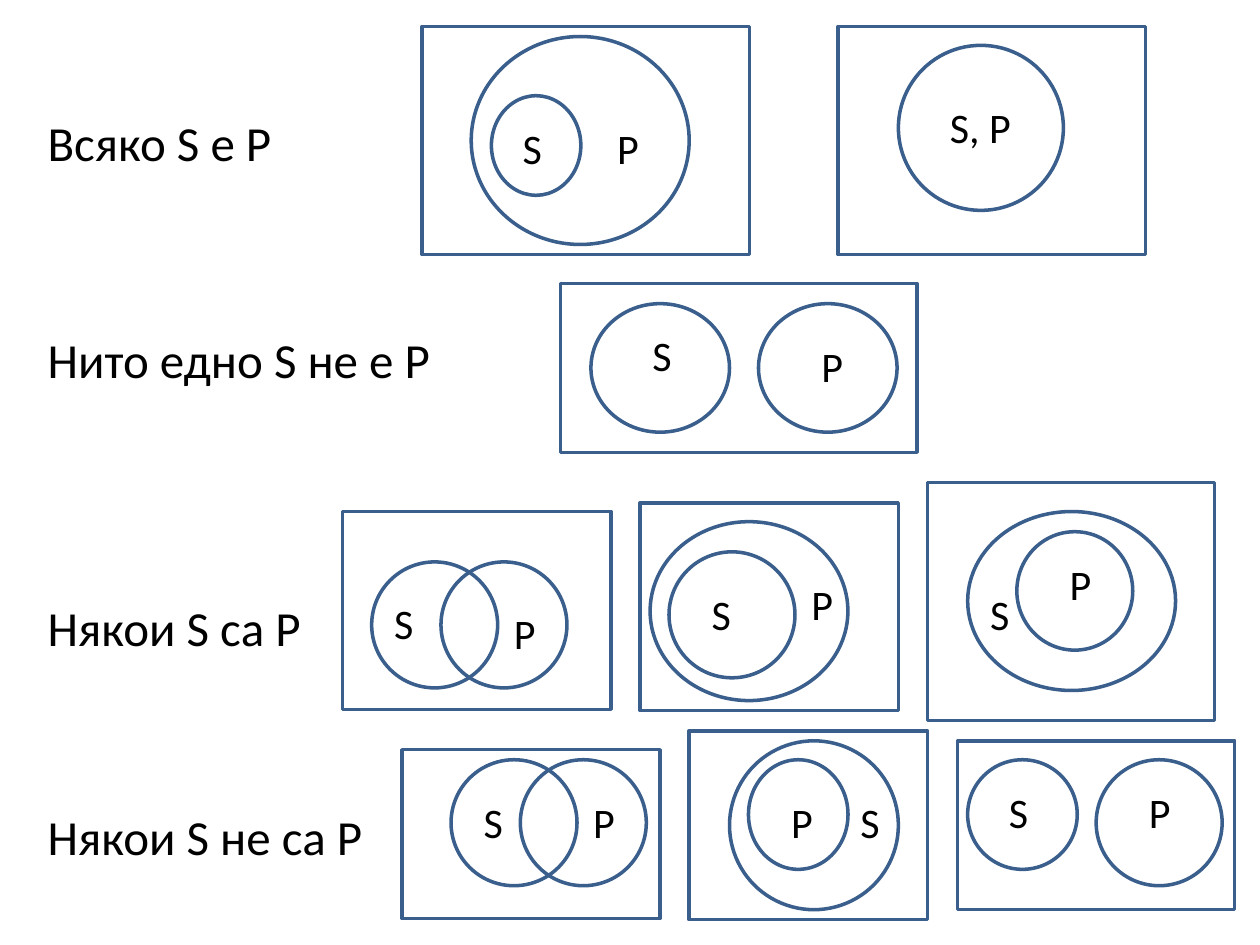
"""Euler diagrams for the four categorical statements about S and P."""
from pptx import Presentation
from pptx.dml.color import RGBColor
from pptx.enum.shapes import MSO_SHAPE as Shape
from pptx.util import Inches, Pt

BLUE = RGBColor(0x3A, 0x5F, 0x8C)
BLACK = RGBColor(0, 0, 0)
FONT = "Calibri"
LEFT = 0.28
LABEL_WIDTHS = {"S": 0.36, "P": 0.38, "S, P": 1.02}

STATEMENTS = [
    ("Всяко S е P", 0.84, 2.2, 0.57),
    ("Нито едно S не е P", 2.57, 3.39, 0.57),
    ("Някои S са P", 4.69, 2.24, 0.88),
    ("Някои S не са P", 6.35, 2.76, 0.57),
]

# Each diagram: frame, circles (left, top, width, height), labels (text, left, top)
DIAGRAMS = [
    ((3.35, 0.21, 2.6, 1.81),
     [(3.74, 0.29, 1.73, 1.65), (3.9, 0.76, 0.71, 0.79)],
     [("S", 4.05, 0.92), ("P", 4.8, 0.92)]),
    ((6.65, 0.21, 2.44, 1.81),
     [(7.13, 0.36, 1.31, 1.31)],
     [("S, P", 7.44, 0.76)]),
    ((4.45, 2.25, 2.83, 1.34),
     [(4.69, 2.41, 1.1, 1.02), (6.02, 2.41, 1.1, 1.02)],
     [("S", 5.08, 2.57), ("P", 6.42, 2.65)]),
    ((2.72, 4.06, 2.13, 1.57),
     [(2.95, 4.46, 1, 1), (3.5, 4.46, 1, 1)],
     [("S", 3.03, 4.69), ("P", 3.98, 4.77)]),
    ((5.08, 3.99, 2.05, 1.65),
     [(5.16, 4.14, 1.57, 1.42), (5.31, 4.38, 1, 1)],
     [("S", 5.55, 4.62), ("P", 6.34, 4.54)]),
    ((7.36, 3.83, 2.28, 1.89),
     [(7.68, 4.06, 1.65, 1.42), (8.07, 4.22, 0.92, 0.94)],
     [("S", 7.76, 4.62), ("P", 8.39, 4.38)]),
    ((3.19, 5.95, 2.05, 1.34),
     [(3.58, 6.03, 1, 1), (4.13, 6.03, 1, 1)],
     [("S", 3.74, 6.27), ("P", 4.61, 6.27)]),
    ((5.47, 5.8, 1.89, 1.5),
     [(5.79, 5.88, 1.34, 1.34), (5.94, 6.03, 0.79, 0.87)],
     [("P", 6.18, 6.27), ("S", 6.73, 6.27)]),
    ((7.6, 5.88, 2.2, 1.34),
     [(7.68, 6.03, 0.87, 0.87), (8.7, 6.03, 1, 1)],
     [("S", 7.91, 6.19), ("P", 9.02, 6.19)]),
]


def add_outline(s, kind, box):
    sp = s.shapes.add_shape(kind, *map(Inches, box))
    sp.shadow.inherit = False
    sp.fill.background()
    sp.line.color.rgb = BLUE
    sp.line.width = Pt(2)


def add_text(s, text, box, size, wrap):
    tf = s.shapes.add_textbox(*map(Inches, box)).text_frame
    tf.word_wrap = wrap
    r = tf.paragraphs[0].add_run()
    r.text = text
    r.font.name = FONT
    r.font.size = Pt(size)
    r.font.color.rgb = BLACK


def main():
    prs = Presentation()
    prs.slide_width, prs.slide_height = Inches(10), Inches(7.5)
    s = prs.slides.add_slide(prs.slide_layouts[6])
    for text, top, width, height in STATEMENTS:
        add_text(s, text, (LEFT, top, width, height), 28, True)
    for frame, circles, labels in DIAGRAMS:
        add_outline(s, Shape.RECTANGLE, frame)
        for circle in circles:
            add_outline(s, Shape.OVAL, circle)
        for text, left, top in labels:
            box = (left, top, LABEL_WIDTHS[text], 0.5)
            add_text(s, text, box, 24, len(text) > 1)
    prs.save("out.pptx")


if __name__ == "__main__":
    main()
